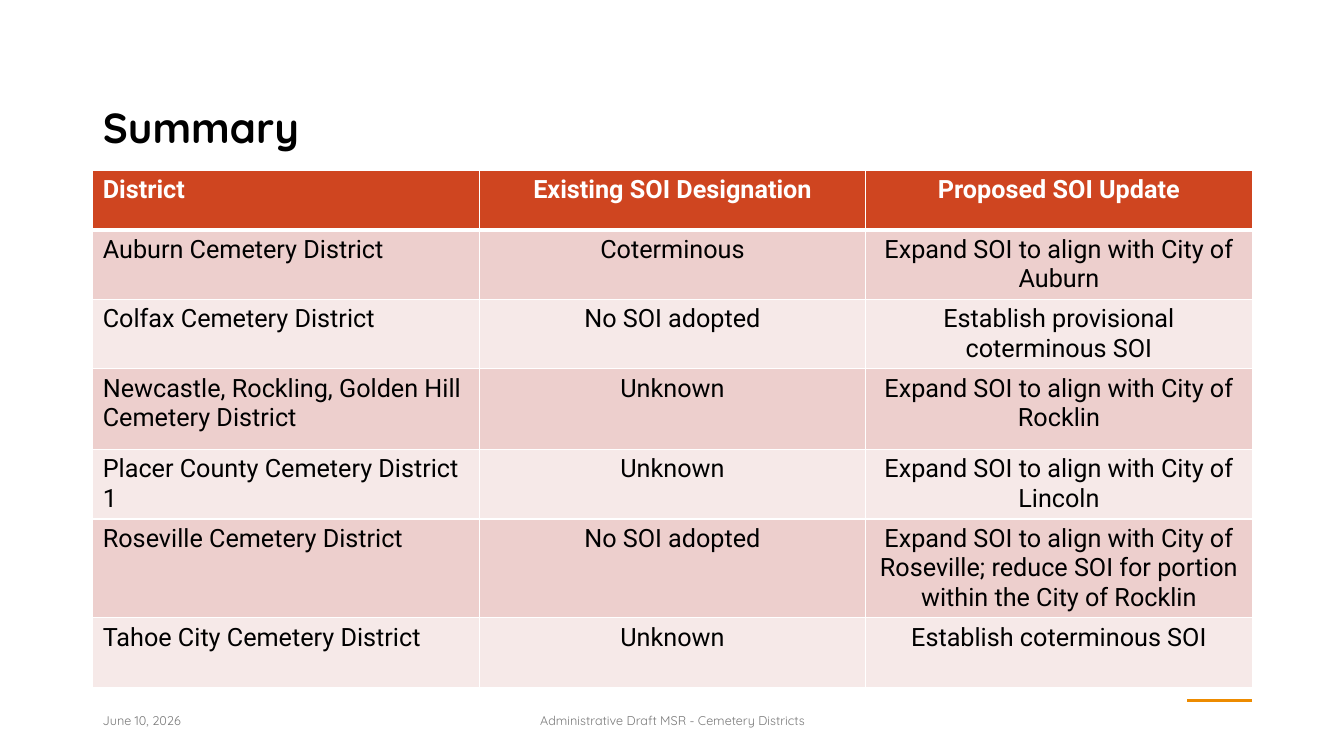
from lxml import etree
from pptx import Presentation
from pptx.dml.color import RGBColor
from pptx.enum.shapes import MSO_CONNECTOR
from pptx.enum.text import MSO_ANCHOR, MSO_AUTO_SIZE, PP_ALIGN
from pptx.oxml.ns import qn
from pptx.util import Emu, Pt

PX = 9144  # 100 px to the inch
LEFT, CENTER = PP_ALIGN.LEFT, PP_ALIGN.CENTER
TOP, MIDDLE = MSO_ANCHOR.TOP, MSO_ANCHOR.MIDDLE
NO_AUTOFIT = MSO_AUTO_SIZE.NONE
STRAIGHT = MSO_CONNECTOR.STRAIGHT

BLACK = RGBColor(0x00, 0x00, 0x00)
WHITE = RGBColor(0xFF, 0xFF, 0xFF)
GREY = RGBColor(0x79, 0x79, 0x79)
ORANGE = RGBColor(0xED, 0x8B, 0x00)
RUST = RGBColor(0xCF, 0x45, 0x20)
BANDS = RGBColor(0xED, 0xCF, 0xCD), RGBColor(0xF6, 0xE9, 0xE8)

HEADING, BODY = "Quicksand", "Roboto"

DISTRICTS = [
    ("District", "Existing SOI Designation", "Proposed SOI Update"),
    ("Auburn Cemetery District", "Coterminous",
     "Expand SOI to align with City of Auburn"),
    ("Colfax Cemetery District", "No SOI adopted",
     "Establish provisional coterminous SOI"),
    ("Newcastle, Rockling, Golden Hill Cemetery District", "Unknown",
     "Expand SOI to align with City of Rocklin"),
    ("Placer County Cemetery District 1", "Unknown",
     "Expand SOI to align with City of Lincoln"),
    ("Roseville Cemetery District", "No SOI adopted",
     "Expand SOI to align with City of Roseville; "
     "reduce SOI for portion within the City of Rocklin"),
    ("Tahoe City Cemetery District", "Unknown", "Establish coterminous SOI"),
]
ROW_HEIGHTS = [59, 69, 69, 80, 69, 98, 69]


def px(*lengths):
    return [Emu(n * PX) for n in lengths]


class SlideBuilder:
    def __init__(self, prs):
        self.s = prs.slides.add_slide(prs.slide_layouts[5])

    def add_text(self, tf, text, font, size, color, bold=False, align=LEFT):
        p = tf.paragraphs[0]
        p.alignment = align
        r = p.add_run()
        r.text = text
        r.font.name = font
        r.font.size = Pt(size)
        r.font.bold = bold
        r.font.color.rgb = color
        return p

    def title(self, text, *box):
        sp = self.s.shapes.title
        sp.left, sp.top, sp.width, sp.height = px(*box)
        tf = sp.text_frame
        tf.auto_size = NO_AUTOFIT
        tf.vertical_anchor = MIDDLE
        p = self.add_text(tf, text, HEADING, 30, BLACK, bold=True)
        p.line_spacing = 0.9

    def footer(self, text, *box, align=LEFT):
        tf = self.s.shapes.add_textbox(*px(*box)).text_frame
        tf.word_wrap = True
        tf.vertical_anchor = MIDDLE
        self.add_text(tf, text, HEADING, 9, GREY, align=align)

    def line(self, x1, y1, x2, y2, color, width):
        cx = self.s.shapes.add_connector(STRAIGHT, *px(x1, y1, x2, y2))
        cx.line.color.rgb = color
        cx.line.width = Pt(width)
        etree.SubElement(cx._element.spPr, qn("a:effectLst"))

    def borders(self, cell, bottom):
        tcPr = cell._tc.get_or_add_tcPr()
        for side, width in ("L", 1), ("R", 1), ("T", 1), ("B", bottom):
            ln = etree.SubElement(tcPr, qn(f"a:ln{side}"), w=str(Pt(width)))
            fill = etree.SubElement(ln, qn("a:solidFill"))
            etree.SubElement(fill, qn("a:srgbClr"), val=str(WHITE))

    def table(self, rows, heights, left, top, width):
        shape = self.s.shapes.add_table(
            len(rows), len(rows[0]), *px(left, top, width, sum(heights)))
        table = shape.table
        for i, (texts, height) in enumerate(zip(rows, heights)):
            table.rows[i].height = Emu(height * PX)
            header = i == 0
            for j, text in enumerate(texts):
                cell = table.cell(i, j)
                self.borders(cell, 3 if header else 1)
                cell.fill.solid()
                cell.fill.fore_color.rgb = RUST if header else BANDS[(i - 1) % 2]
                cell.vertical_anchor = TOP
                self.add_text(cell.text_frame, text, BODY, 18,
                              WHITE if header else BLACK, bold=header,
                              align=CENTER if j else LEFT)


def main():
    prs = Presentation()
    prs.slide_width, prs.slide_height = px(1333, 750)
    slide = SlideBuilder(prs)

    # Accent line and title
    slide.line(1242, 695, 1177, 695, ORANGE, 2.5)
    slide.title("Summary", 92, 74, 1150, 110)

    # District table
    slide.table(DISTRICTS, ROW_HEIGHTS, 92, 169, 1150)

    # Footer
    slide.footer("June 10, 2026", 92, 695, 300, 40)
    slide.footer("Administrative Draft MSR - Cemetery Districts",
                 442, 695, 450, 40, align=CENTER)

    prs.save("out.pptx")


if __name__ == "__main__":
    main()
